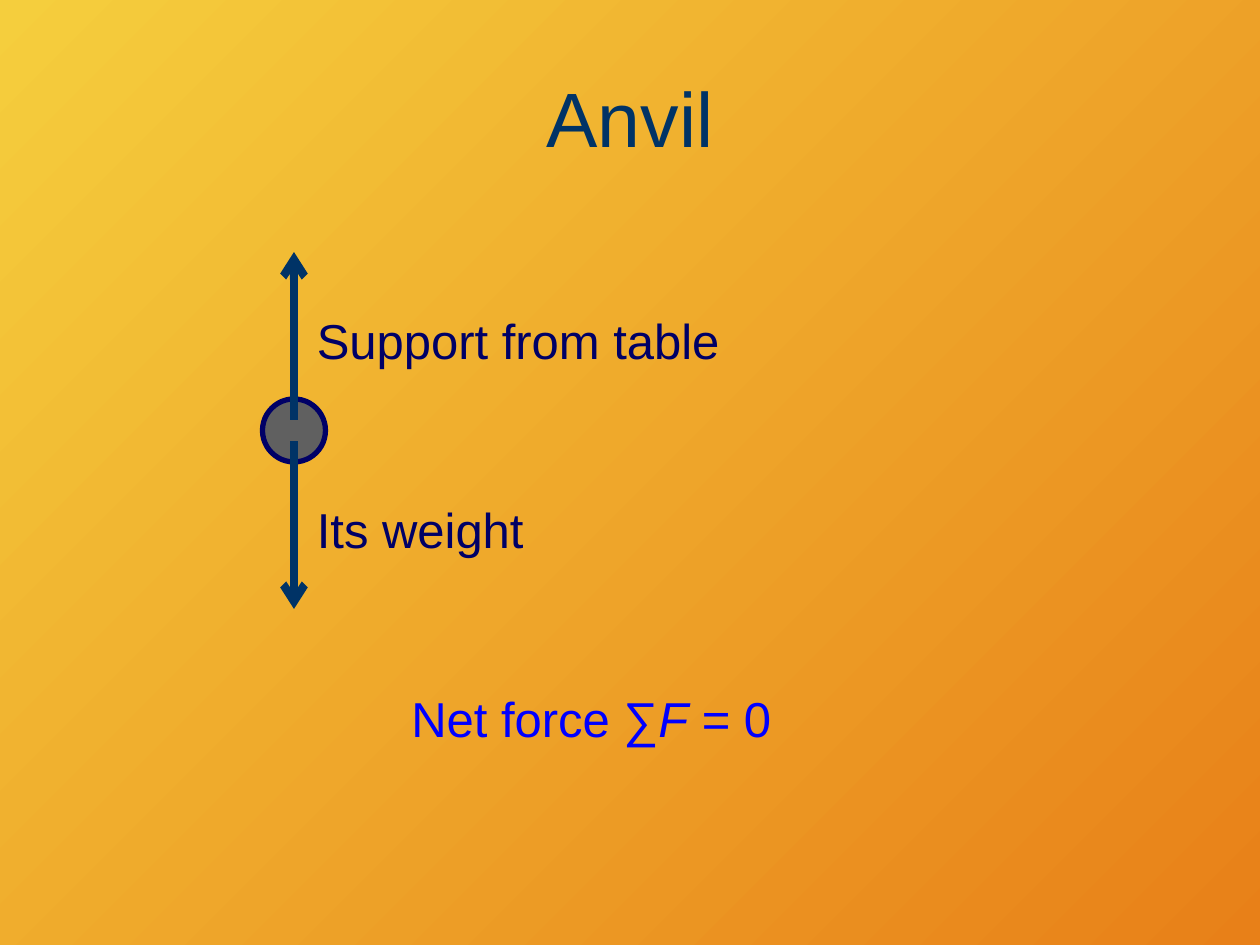
"""Build the slide of forces on an anvil."""
from lxml.etree import SubElement
from pptx import Presentation
from pptx.dml.color import RGBColor as Rgb
from pptx.enum.shapes import MSO_CONNECTOR as Conn, MSO_SHAPE as Kind
from pptx.enum.text import MSO_ANCHOR as Anchor, MSO_AUTO_SIZE as Auto, PP_ALIGN as Align
from pptx.oxml.ns import qn
from pptx.util import Pt

HUES = {"sun": "F5CE3D", "rust": "E88018", "teal": "003366",
        "navy": "000066", "blue": "0000FF", "grey": "606060"}
TITLE = "Anvil"
FORCES = [
    {"text": "Its weight", "width": 134, "top": 282, "start": 252, "end": 348},
    {"text": "Support from table", "width": 248, "top": 174, "start": 240, "end": 144},
]
NET = [("Net force ∑", False), ("F", True), (" = 0", False)]
AXIS, BALL, MID = 168, 36, 246
LABEL = 174


def hue(name):
    return Rgb.from_string(HUES[name])


def write(shape, runs, size=28, color="navy", align=Align.LEFT):
    para = shape.text_frame.paragraphs[0]
    para.alignment = align
    for text, slant in runs:
        run = para.add_run()
        run.text = text
        font = run.font
        font.name, font.size, font.italic = "Arial", Pt(size), slant
        font.color.rgb = hue(color)


def add_label(slide, runs, left, top, width, **style):
    box = slide.shapes.add_textbox(Pt(left), Pt(top), Pt(width), Pt(41))
    box.text_frame.word_wrap = False
    box.text_frame.auto_size = Auto.SHAPE_TO_FIT_TEXT
    write(box, runs, **style)


def add_arrow(slide, start, end):
    arrow = slide.shapes.add_connector(
        Conn.STRAIGHT, Pt(AXIS), Pt(start), Pt(AXIS), Pt(end))
    arrow.line.color.rgb = hue("teal")
    arrow.line.width = Pt(4.5)
    SubElement(arrow.line._get_or_add_ln(), qn("a:tailEnd"), type="arrow")
    SubElement(arrow._element.spPr, qn("a:effectLst"))


def main():
    deck = Presentation()
    deck.slide_width, deck.slide_height = Pt(720), Pt(540)
    slide = deck.slides.add_slide(deck.slide_layouts[5])

    back = slide.background.fill
    back.gradient()
    back.gradient_angle = 315
    for stop, name, place in zip(back.gradient_stops, ("sun", "rust"), (0, 1)):
        stop.color.rgb = hue(name)
        stop.position = place

    title = slide.shapes.title
    title.left, title.top, title.width, title.height = Pt(36), Pt(21.6), Pt(648), Pt(90)
    title.text_frame.vertical_anchor = Anchor.MIDDLE
    write(title, [(TITLE, False)], size=44, color="teal", align=Align.CENTER)

    ball = slide.shapes.add_shape(
        Kind.OVAL, Pt(AXIS - BALL / 2), Pt(MID - BALL / 2), Pt(BALL), Pt(BALL))
    ball.shadow.inherit = False
    ball.fill.solid()
    ball.fill.fore_color.rgb = hue("grey")
    ball.line.color.rgb = hue("navy")
    ball.line.width = Pt(3)

    for force in FORCES:
        add_arrow(slide, force["start"], force["end"])
        add_label(slide, [(force["text"], False)], LABEL, force["top"], force["width"])
    add_label(slide, NET, 228, 390, 222, color="blue")

    deck.save("out.pptx")


if __name__ == "__main__":
    main()
